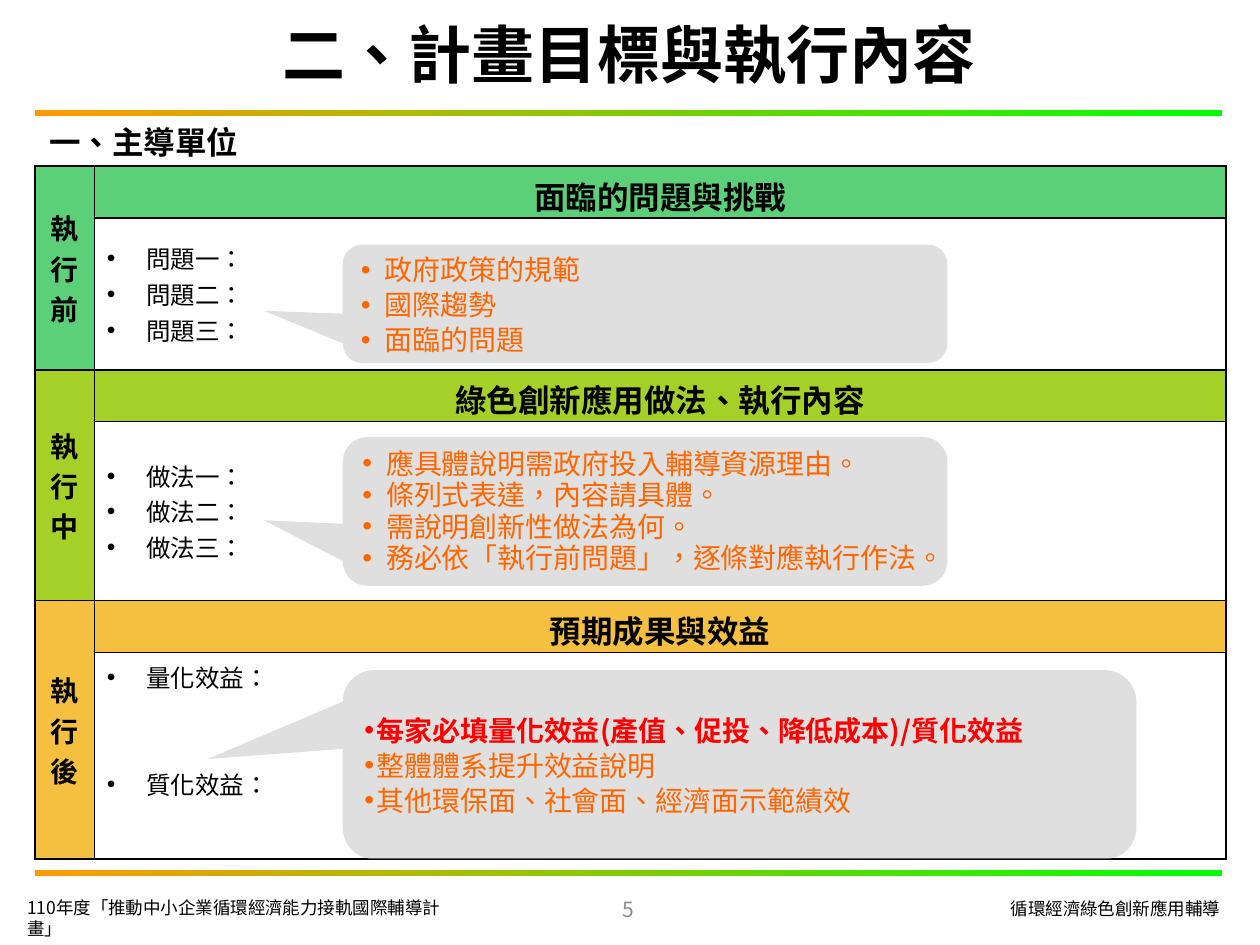
from lxml.etree import SubElement
from pptx import Presentation
from pptx.dml.color import RGBColor
from pptx.enum.shapes import MSO_SHAPE as Shape
from pptx.enum.text import MSO_ANCHOR as Anchor, PP_ALIGN as Align
from pptx.oxml.ns import qn
from pptx.util import Cm, Pt

FONT = "Noto Sans CJK SC"
BLACK, ORANGE, RED, GREY = "000000", "FF6600", "FF0000", "8C8C8C"
STAGES = [
    ("執行前", "面臨的問題與挑戰", "5BD078", 3.07, ["問題一：", "問題二：", "問題三："]),
    ("執行中", "綠色創新應用做法、執行內容", "A5D028", 3.61, ["做法一：", "做法二：", "做法三："]),
    ("執行後", "預期成果與效益", "F5C040", 4.17, ["量化效益：", "質化效益："]),
]


def color(value):
    """Turn a hex string into a colour."""
    return RGBColor.from_string(value)


def place(box):
    """Turn left, top, width and height in centimetres into lengths."""
    return [Cm(length) for length in box]


def add_span(para, text, size, tint=BLACK, bold=False):
    """Add one formatted run to a paragraph."""
    span = para.add_run()
    span.text = text
    font = span.font
    font.size, font.bold, font.name = Pt(size), bold, FONT
    font.color.rgb = color(tint)
    properties = span._r.get_or_add_rPr()
    properties.set("lang", "zh-TW")
    SubElement(properties, qn("a:ea"), typeface=FONT)


def add_bullet(para, indent):
    """Give a paragraph a hanging round bullet."""
    properties = para._p.get_or_add_pPr()
    properties.set("marL", str(Cm(indent)))
    properties.set("indent", str(-Cm(indent)))
    SubElement(properties, qn("a:buFont"), typeface="Arial")
    SubElement(properties, qn("a:buChar"), char="•")


def next_para(frame, index):
    """Return the first paragraph of a frame, or a new one after it."""
    return frame.paragraphs[0] if index == 0 else frame.add_paragraph()


def add_label(page, box, text, size, align=Align.LEFT, tint=BLACK, bold=False,
              wrap=True, anchor=Anchor.TOP, spacing=None):
    """Place a one-paragraph text box."""
    frame = page.shapes.add_textbox(*place(box)).text_frame
    frame.word_wrap, frame.vertical_anchor = wrap, anchor
    para = frame.paragraphs[0]
    para.alignment = align
    if spacing:
        para.line_spacing = Pt(spacing)
    add_span(para, text, size, tint, bold)


def add_bar(page, box):
    """Place an orange-to-green gradient bar."""
    bar = page.shapes.add_shape(Shape.RECTANGLE, *place(box))
    bar.shadow.inherit = False
    bar.line.fill.background()
    bar.fill.gradient()
    bar.fill.gradient_angle = 0
    for stop, tint, position in zip(bar.fill.gradient_stops, ("FF9900", "00FF00"), (0, 1)):
        stop.color.rgb = color(tint)
        stop.position = position


def set_title(page, box, text):
    """Place and fill the title placeholder."""
    title = page.shapes.title
    title.left, title.top, title.width, title.height = place(box)
    frame = title.text_frame
    frame.vertical_anchor = Anchor.MIDDLE
    frame.paragraphs[0].alignment = Align.CENTER
    add_span(frame.paragraphs[0], text, 36, bold=True)


def style_cell(cell, fill=None):
    """Draw black borders around a cell and set its fill."""
    properties = cell._tc.get_or_add_tcPr()
    for side in ("lnL", "lnR", "lnT", "lnB"):
        line = SubElement(properties, qn(f"a:{side}"), w=str(Pt(1)))
        solid = SubElement(line, qn("a:solidFill"))
        SubElement(solid, qn("a:srgbClr"), val=BLACK)
    if fill:
        cell.fill.solid()
        cell.fill.fore_color.rgb = color(fill)
    else:
        cell.fill.background()


def fill_heading(cell, text, size):
    """Write centred bold text in a cell."""
    para = cell.text_frame.paragraphs[0]
    para.alignment = Align.CENTER
    add_span(para, text, size, bold=True)


def add_stage_table(page, box):
    """Place the table with a header row and a body row for each stage."""
    header_height, stage_width = 1.04, 1.19
    table = page.shapes.add_table(2 * len(STAGES), 2, *place(box)).table
    table.first_row = table.horz_banding = False
    table.columns[0].width = Cm(stage_width)
    table.columns[1].width = Cm(box[2] - stage_width)
    for index, (stage, heading, fill, body_height, items) in enumerate(STAGES):
        top = 2 * index
        table.rows[top].height = Cm(header_height)
        table.rows[top + 1].height = Cm(body_height)
        side, header = table.cell(top, 0), table.cell(top, 1)
        below, body = table.cell(top + 1, 0), table.cell(top + 1, 1)
        for cell in (side, header, below):
            style_cell(cell, fill)
        style_cell(body)
        side.merge(below)
        side.vertical_anchor = Anchor.MIDDLE
        fill_heading(side, stage, 16)
        fill_heading(header, heading, 18)
        spread = len(items) == 2
        body.vertical_anchor = Anchor.TOP if spread else Anchor.MIDDLE
        for number, item in enumerate(items):
            para = next_para(body.text_frame, number)
            add_bullet(para, 0.79)
            if spread and number:
                para.space_before = Pt(41)
            add_span(para, item, 14)


def add_callout(page, box, tip, lines, spacing, indent=0.48, lead=ORANGE):
    """Place a translucent callout with bulleted lines, the first in the lead colour."""
    callout = page.shapes.add_shape(Shape.ROUNDED_RECTANGULAR_CALLOUT, *place(box))
    callout.shadow.inherit = False
    callout.adjustments[0], callout.adjustments[1] = tip
    callout.line.fill.background()
    callout.fill.solid()
    callout.fill.fore_color.rgb = color("C0C0C0")
    tone = callout._element.spPr.find(qn("a:solidFill"))[0]
    SubElement(tone, qn("a:alpha"), val="50000")
    frame = callout.text_frame
    frame.word_wrap, frame.vertical_anchor = True, Anchor.MIDDLE
    for index, line in enumerate(lines):
        para = next_para(frame, index)
        add_bullet(para, indent)
        para.alignment = Align.LEFT
        para.line_spacing = Pt(spacing)
        tint = ORANGE if index else lead
        add_span(para, line, 16, tint, bold=tint == RED)


def add_footer(page):
    """Place the two footer texts and the page number."""
    add_label(page, (0.3, 17.96, 9.42, 0.69), "110年度「推動中小企業循環經濟能力接軌國際輔導計畫」", 10)
    add_label(page, (18.69, 17.98, 6.15, 0.69), "循環經濟綠色創新應用輔導", 10, Align.RIGHT)
    add_label(page, (9.7, 17.81, 5.92, 1.02), "5", 12, Align.CENTER, GREY, anchor=Anchor.MIDDLE)


def main():
    """Build and save the deck."""
    deck = Presentation()
    deck.slide_width, deck.slide_height = Cm(25.4), Cm(19.05)
    page = deck.slides.add_slide(deck.slide_layouts[5])
    for top in (2.21, 17.53):
        add_bar(page, (0.71, top, 23.93, 0.13))
    add_footer(page)
    set_title(page, (0, 0.33, 25.35, 1.5), "二、計畫目標與執行內容")
    add_stage_table(page, (0.71, 3.35, 24, 14.02))
    add_callout(page, (6.91, 8.81, 12.19, 3), (-0.63, 0.06),
                ["應具體說明需政府投入輔導資源理由。", "條列式表達，內容請具體。",
                 "需說明創新性做法為何。", "務必依「執行前問題」，逐條對應執行作法。"], 18)
    add_callout(page, (6.91, 4.93, 12.19, 2.39), (-0.63, 0.06),
                ["政府政策的規範", "國際趨勢", "面臨的問題"], 20)
    add_callout(page, (6.91, 13.51, 16, 3.81), (-0.67, -0.03),
                ["每家必填量化效益(產值、促投、降低成本)/質化效益", "整體體系提升效益說明",
                 "其他環保面、社會面、經濟面示範績效"], 20, 0.25, RED)
    add_label(page, (0.71, 2.34, 4.37, 1.04), "一、主導單位", 18, Align.CENTER,
              bold=True, wrap=False, spacing=22)
    deck.save("out.pptx")


if __name__ == "__main__":
    main()
